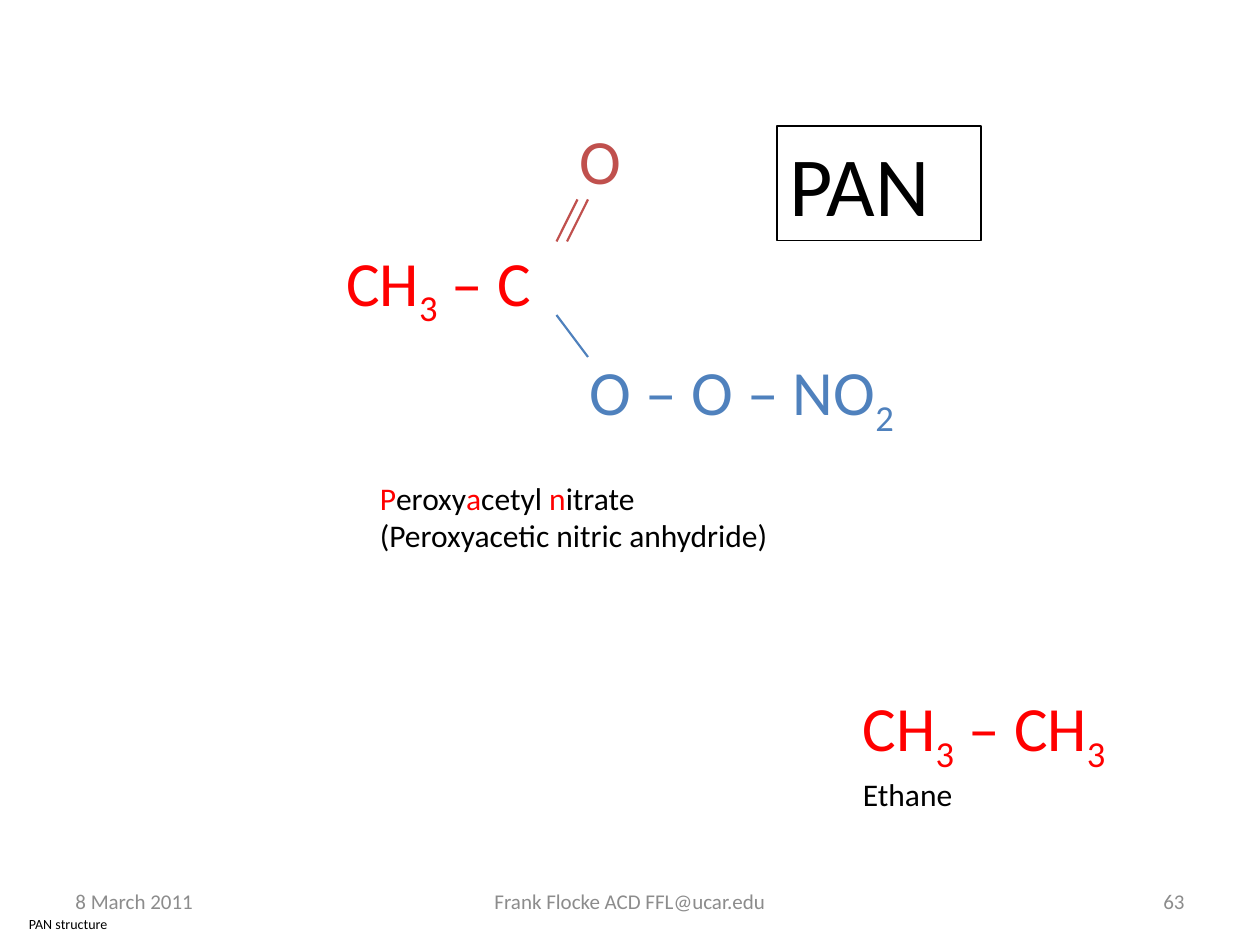
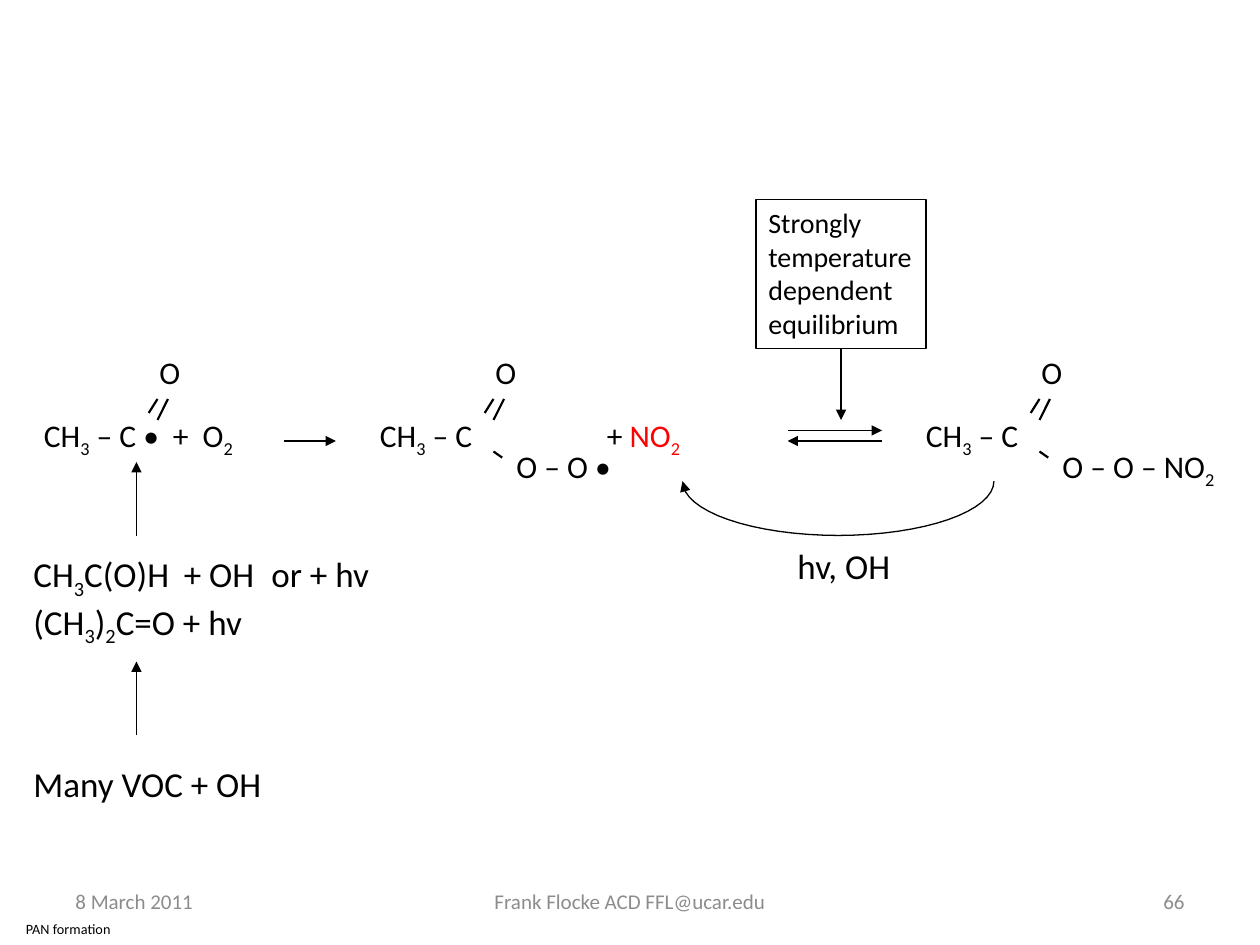
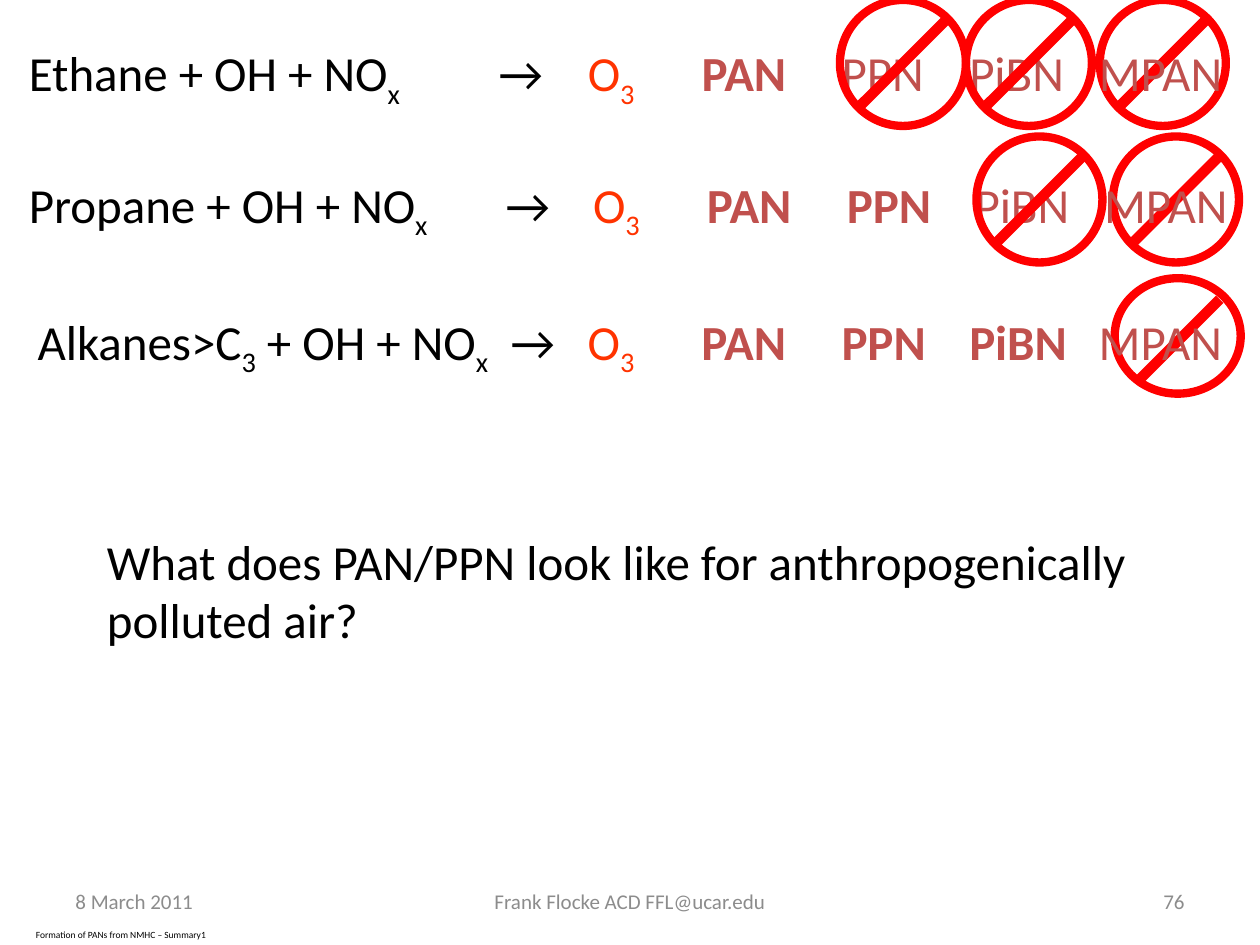
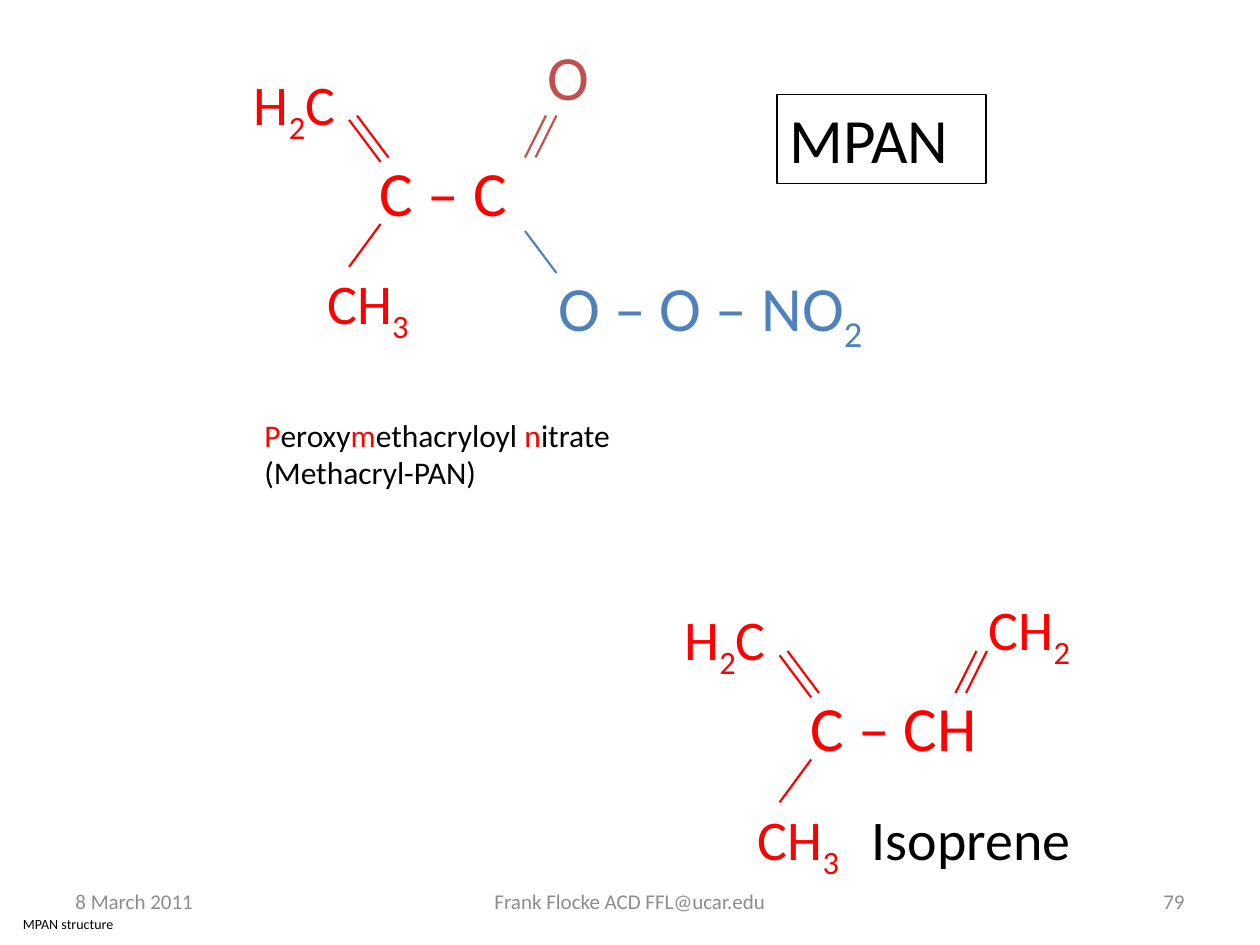
"""Build four slides on the structure and formation of PAN compounds."""
from dataclasses import dataclass
from math import cos, pi, sin

from lxml import etree
from pptx import Presentation
from pptx.dml.color import RGBColor
from pptx.enum.shapes import MSO_CONNECTOR, MSO_SHAPE
from pptx.enum.text import MSO_ANCHOR, MSO_AUTO_SIZE, PP_ALIGN
from pptx.oxml.ns import qn
from pptx.util import Pt

STRAIGHT = MSO_CONNECTOR.STRAIGHT
RECT, OVAL = MSO_SHAPE.RECTANGLE, MSO_SHAPE.OVAL
TOP, MIDDLE = MSO_ANCHOR.TOP, MSO_ANCHOR.MIDDLE
LEFT, CENTER, RIGHT = PP_ALIGN.LEFT, PP_ALIGN.CENTER, PP_ALIGN.RIGHT
FIT, NO_FIT = MSO_AUTO_SIZE.SHAPE_TO_FIT_TEXT, MSO_AUTO_SIZE.NONE
BOTTOM_SITE = 2
INSET = 7.2


@dataclass(frozen=True)
class Theme:
    """Colours, type sizes and line widths of the deck."""
    font: str = "Calibri"
    black: str = "000000"
    red: str = "FF0000"
    ozone: str = "FF3300"
    brick: str = "C0504D"
    blue: str = "4F81BD"
    grey: str = "8C8C8C"
    huge: float = 48
    formula: float = 36
    branch: float = 32
    equation: float = 28
    note: float = 20
    body: float = 18
    boxed: float = 16
    footer: float = 12
    thin: float = 0.75
    bond: float = 1.25
    ring: float = 4.75
    slash: float = 6


T = Theme()


@dataclass(frozen=True)
class Run:
    """A piece of text with one look."""
    text: str
    color: str = T.black
    sub: bool = False
    bold: bool = False


@dataclass(frozen=True)
class Para:
    """A paragraph of runs with its type size and tab stops."""
    runs: list[Run]
    size: float
    tabs: tuple[float, ...] = ()
    align: PP_ALIGN = LEFT


@dataclass(frozen=True)
class Row:
    """A reaction with the products it yields and those it does not."""
    source: str
    left: float
    top: float
    arrow: float
    shift: float
    made: tuple[str, ...]
    banned: tuple[str, ...]
    signs: tuple[float, ...]
    sign_top: float
    sign_height: float = 72


def chem(text: str, color: str = T.black, bold: bool = False) -> list[Run]:
    """Split a formula into runs, with the letter after each _ lowered."""
    first, *rest = text.split("_")
    runs = [Run(first, color, bold=bold)]
    for part in rest:
        runs += [Run(part[0], color, sub=True), Run(part[1:], color, bold=bold)]
    return [run for run in runs if run.text]


def accent(*parts: str) -> list[Run]:
    """Colour every other part red, starting with the first."""
    return [Run(s, T.black if i % 2 else T.red) for i, s in enumerate(parts)]


def rgb(color: str) -> RGBColor:
    """Turn a hex string into a colour."""
    return RGBColor.from_string(color)


def fill_text(sp, paras: list[Para], anchor=TOP, wrap: bool = True, fit=FIT) -> None:
    """Write paragraphs into a shape."""
    tf = sp.text_frame
    tf.word_wrap, tf.auto_size, tf.vertical_anchor = wrap, fit, anchor
    for i, para in enumerate(paras):
        p = tf.add_paragraph() if i else tf.paragraphs[0]
        p.alignment = para.align
        if para.tabs:
            stops = etree.SubElement(p._p.get_or_add_pPr(), qn("a:tabLst"))
            for x in para.tabs:
                etree.SubElement(stops, qn("a:tab"), pos=str(int(Pt(x))), algn="l")
        p.font.name, p.font.size = T.font, Pt(para.size)
        uniform = len({run.color for run in para.runs}) == 1
        if uniform:
            p.font.color.rgb = rgb(para.runs[0].color)
        for run in para.runs:
            r = p.add_run()
            r.text = run.text
            if not uniform:
                r.font.color.rgb = rgb(run.color)
            if run.bold:
                r.font.bold = True
            if run.sub:
                r._r.get_or_add_rPr().set("baseline", "-25000")


def label(s, x: float, y: float, w: float, *paras: Para, h: float = 0,
          wrap: bool = False, anchor=TOP, fit=FIT) -> None:
    """Add a text box, as tall as its lines unless a height is given."""
    h = h or INSET + sum(1.2 * para.size for para in paras)
    sp = s.shapes.add_textbox(Pt(x), Pt(y), Pt(w), Pt(h))
    fill_text(sp, list(paras), anchor, wrap, fit)


def outline(s, kind, x: float, y: float, w: float, h: float, color: str, width: float):
    """Add an unfilled preset shape."""
    sp = s.shapes.add_shape(kind, Pt(x), Pt(y), Pt(w), Pt(h))
    sp.shadow.inherit = False
    sp.fill.background()
    sp.line.color.rgb, sp.line.width = rgb(color), Pt(width)
    return sp


def framed(s, x: float, y: float, w: float, h: float, text: str, size: float):
    """Add a framed caption."""
    sp = outline(s, RECT, x, y, w, h, T.black, T.thin)
    fill_text(sp, [Para([Run(text)], size)])
    return sp


def add_head(sp, end: str) -> None:
    """Put a triangle on one end of a line."""
    ln = sp._element.spPr.find(qn("a:ln"))
    etree.SubElement(ln, qn(f"a:{end}"), type="triangle")


def line(s, x1: float, y1: float, x2: float, y2: float, color: str = T.black,
         width: float = T.bond):
    """Add a straight line."""
    sp = s.shapes.add_connector(STRAIGHT, Pt(x1), Pt(y1), Pt(x2), Pt(y2))
    sp.line.color.rgb, sp.line.width = rgb(color), Pt(width)
    etree.SubElement(sp._element.spPr, qn("a:effectLst"))
    return sp


def arrow(s, x1: float, y1: float, x2: float, y2: float):
    """Add a thin arrow."""
    sp = line(s, x1, y1, x2, y2, width=T.thin)
    add_head(sp, "tailEnd")
    return sp


def double_bond(s, x: float, y: float, color: str) -> None:
    """Draw two parallel strokes that lean to the right."""
    for dx in (0, 6):
        line(s, x + dx, y, x + dx - 12, y + 24, color)


def peroxy_nitrate(s, x: float, y: float) -> None:
    """Draw the double-bonded O and the peroxy nitrate tail."""
    label(s, x, y, 40.3, Para(chem("O", T.brick), T.formula))
    label(s, x + 6, y + 132, 202.3, Para(chem("O – O – NO_2", T.blue), T.formula))
    double_bond(s, x + 6, y + 48, T.brick)
    line(s, x - 6, y + 114, x + 12, y + 138, T.blue)


def isopropenyl(s, x: float, y: float, core: str, width: float, methyl: Para,
                methyl_width: float) -> None:
    """Draw a carbon core with its methylene and methyl branches."""
    label(s, x, y, width, Para(chem(core, T.red), T.formula))
    label(s, x - 72, y - 48, 69.8, Para(chem("H_2C", T.red), T.branch))
    label(s, x - 30, y + 66, methyl_width, methyl, wrap=bool(methyl.tabs))
    line(s, x + 7.5, y + 44, x - 10.5, y + 68.5, T.red)
    line(s, x + 7.5, y + 8.5, x - 10.5, y - 15.5, T.red)
    line(s, x + 12, y + 6, x - 6, y - 18, T.red)


def acetyl(s, x: float, width: float, core: Para, tail: str = "",
           tail_width: float = 0) -> None:
    """Draw a small acetyl group with an optional peroxy tail."""
    y = 234
    label(s, x, y, width, core, wrap=bool(core.tabs))
    label(s, x + 66, y - 36, 27.4, Para(chem("O"), T.body))
    line(s, x + 72, y - 6, x + 67, y + 2)
    line(s, x + 78, y - 6, x + 72, y + 6)
    if tail:
        label(s, x + 78, y + 18, tail_width, Para(chem(tail), T.body))
        line(s, x + 72, y + 24, x + 77, y + 27.5)


def return_curve(s, cx: float, top: float, rx: float, ry: float) -> None:
    """Draw the lower half of an ellipse with an arrowhead at its left end."""
    steps = 32
    points = [(Pt(cx - rx * cos(pi * i / steps)), Pt(top + ry * sin(pi * i / steps)))
              for i in range(steps + 1)]
    fb = s.shapes.build_freeform(*points[0])
    fb.add_line_segments(points[1:], close=False)
    sp = fb.convert_to_shape()
    sp.shadow.inherit = False
    sp.fill.background()
    sp.line.color.rgb, sp.line.width = rgb(T.black), Pt(T.thin)
    add_head(sp, "headEnd")


def prohibit(s, x: float, y: float, h: float) -> None:
    """Draw a prohibition sign."""
    outline(s, OVAL, x, y, 72, h, T.red, T.ring)
    line(s, x + 12, y + 60, x + 60, y + 12, T.red, T.slash)


def reaction(s, row: Row) -> None:
    """Draw one reaction, its last sign behind the text and the others in front."""
    columns = (row.arrow, *(x + row.shift for x in (336, 401, 481, 554, 628)))
    tabs = tuple(x - row.left - INSET for x in columns)
    runs = (chem(row.source) + chem("\t→\t") + chem("O_3", T.ozone)
            + chem("".join("\t" + name for name in row.made), T.brick, bold=True)
            + chem("".join("\t" + name for name in row.banned), T.brick))
    *front, back = row.signs
    prohibit(s, back, row.sign_top, row.sign_height)
    label(s, row.left, row.top, 712, Para(runs, T.equation, tabs), wrap=True)
    for x in front:
        prohibit(s, x, row.sign_top, row.sign_height)


def new_slide(prs, title: str, number: str, y: float, w: float, size: float):
    """Add a slide with its small corner title and its footers."""
    s = prs.slides.add_slide(prs.slide_layouts[5])
    sp = s.shapes.title
    sp.left, sp.top, sp.width, sp.height = Pt(0), Pt(y), Pt(w), Pt(540 - y)
    fill_text(sp, [Para([Run(title)], size, align=CENTER)], MIDDLE, fit=NO_FIT)
    for x, width, text, align in ((36, 168, "8 March 2011", LEFT),
                                  (246, 228, "Frank Flocke ACD FFL@ucar.edu", CENTER),
                                  (516, 168, number, RIGHT)):
        label(s, x, 500.4, width, Para([Run(text, T.grey)], T.footer, align=align),
              h=28.8, wrap=True, anchor=MIDDLE, fit=NO_FIT)
    return s


def pan_structure(prs) -> None:
    """Build the slide on the structure of PAN."""
    s = new_slide(prs, "PAN structure", "63", 516, 78, 8)
    label(s, 190.8, 135.4, 145.4, Para(chem("CH_3 – C", T.red), T.formula))
    peroxy_nitrate(s, 324, 66)
    label(s, 210, 270, 312.5,
          Para(accent("P", "eroxy", "a", "cetyl ", "n", "itrate"), T.body),
          Para(chem("(Peroxyacetic nitric anhydride)"), T.body), h=64.8)
    label(s, 486, 390, 183.6, Para(chem("CH_3 – CH_3", T.red), T.formula),
          Para(chem("Ethane"), T.body), h=79.2)
    framed(s, 444, 72, 116.6, 65.5, "PAN", T.huge)


def pan_formation(prs) -> None:
    """Build the slide on the formation of PAN."""
    s = new_slide(prs, "PAN formation", "66", 522, 78, 8.1)
    acetyl(s, 522, 79.9, Para(chem("CH_3 – C"), T.body), "O – O – NO_2", 108.7)
    acetyl(s, 18, 191.5, Para(chem("CH_3 – C •\t+\tO_2"), T.body, (73.7, 90.8)))
    acetyl(s, 210, 212.4,
           Para(chem("CH_3 – C\t+ ") + chem("NO_2", T.red), T.body, (129.7,)),
           "O – O •", 73.4)
    arrow(s, 162, 252, 192, 252)
    arrow(s, 450, 246, 504, 246)
    arrow(s, 504, 252, 450, 252)
    box = framed(s, 432, 114, 97.2, 85,
                 "Strongly temperature dependent equilibrium", T.boxed)
    arrow(s, 480.6, 199, 480.6, 240).begin_connect(box, BOTTOM_SITE)
    for y in (306, 420):
        arrow(s, 78, y, 78, y - 42)
    label(s, 12, 312, 278.6,
          Para(chem("CH_3C(O)H\t+ OH\tor + hv"), T.note, (86, 136)),
          Para(chem("(CH_3)_2C=O + hv"), T.note), wrap=True)
    label(s, 12, 432, 158.4, Para(chem("Many VOC + OH"), T.note))
    return_curve(s, 479, 275, 89, 31)
    label(s, 448.6, 307.4, 73.4, Para(chem("hv, OH"), T.note))


def summary(prs) -> None:
    """Build the slide that compares the products of three reactions."""
    s = new_slide(prs, "Formation of PANs from NMHC – Summary1", "76", 528, 138, 5.4)
    rows = (
        Row("Alkanes>C_3 + OH + NO_x", 14.4, 174.2, 292, 0,
            ("PAN", "PPN", "PiBN"), ("MPAN",), (637,), 159, 66),
        Row("Propane + OH + NO_x", 9.4, 96, 289, 3,
            ("PAN", "PPN"), ("PiBN", "MPAN"), (558, 636), 78),
        Row("Ethane + OH + NO_x", 9.4, 21, 285, 0,
            ("PAN",), ("PPN", "PiBN", "MPAN"), (480, 552, 628.5), 0),
    )
    for row in rows:
        reaction(s, row)
    question = "What does PAN/PPN look like for anthropogenically polluted air?"
    label(s, 54, 300, 635.8, Para(chem(question), T.equation), h=74.9, wrap=True)


def mpan_structure(prs) -> None:
    """Build the slide on the structure of MPAN."""
    s = new_slide(prs, "MPAN structure", "79", 516, 78, 8)
    methyl = chem("CH_3", T.red)
    isopropenyl(s, 210, 84, "C – C", 107.3, Para(methyl, T.branch), 69.8)
    peroxy_nitrate(s, 306, 18)
    label(s, 144, 234, 275.8,
          Para(accent("P", "eroxy", "m", "ethacryloyl ", "n", "itrate"), T.body),
          Para(chem("(Methacryl-PAN)"), T.body), h=64.8)
    isopropenyl(s, 456, 390, "C – CH", 133.2,
                Para(methyl + chem("\tIsoprene"), T.branch, (65,)), 200.9)
    double_bond(s, 558, 372, T.red)
    label(s, 558, 336, 69.8, Para(chem("CH_2", T.red), T.branch))
    framed(s, 444, 54, 119.5, 51, "MPAN", T.formula)


def main() -> None:
    """Build and save the deck."""
    prs = Presentation()
    prs.slide_width, prs.slide_height = Pt(720), Pt(540)
    for build in (pan_structure, pan_formation, summary, mpan_structure):
        build(prs)
    prs.save("out.pptx")


if __name__ == "__main__":
    main()
